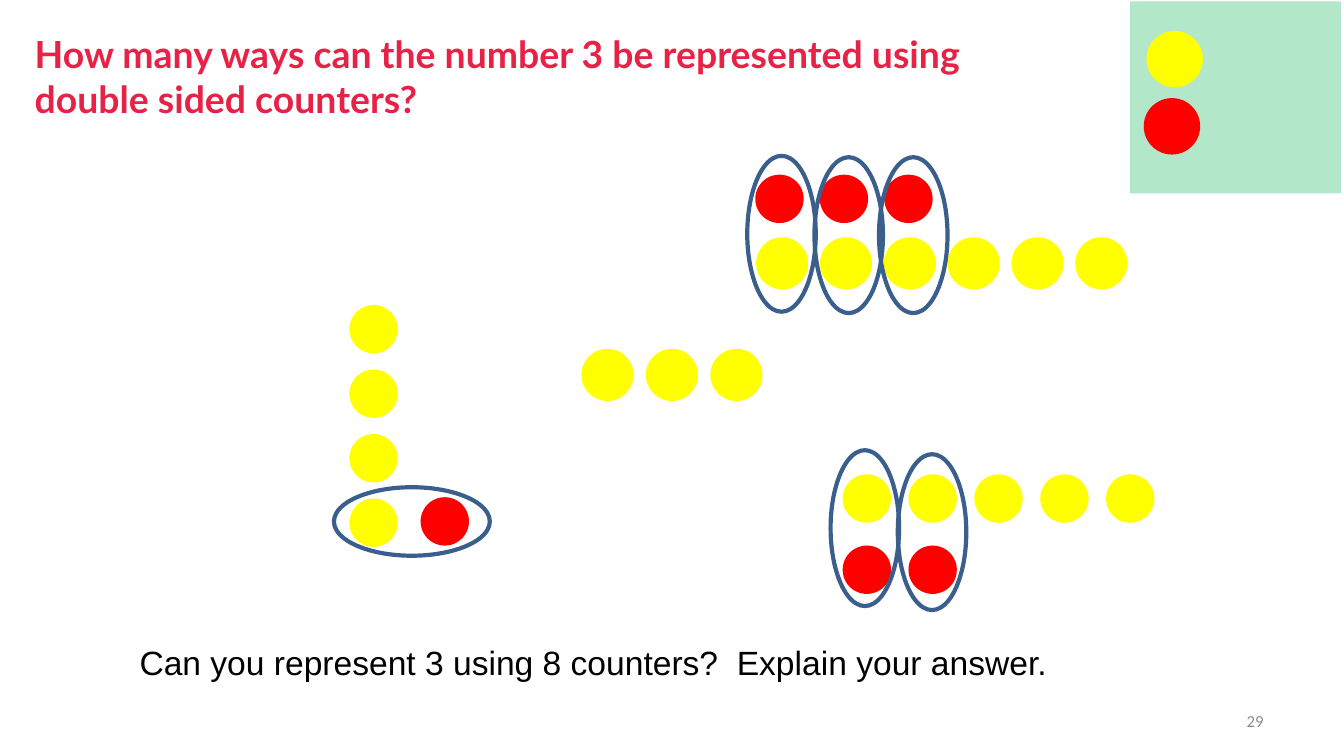
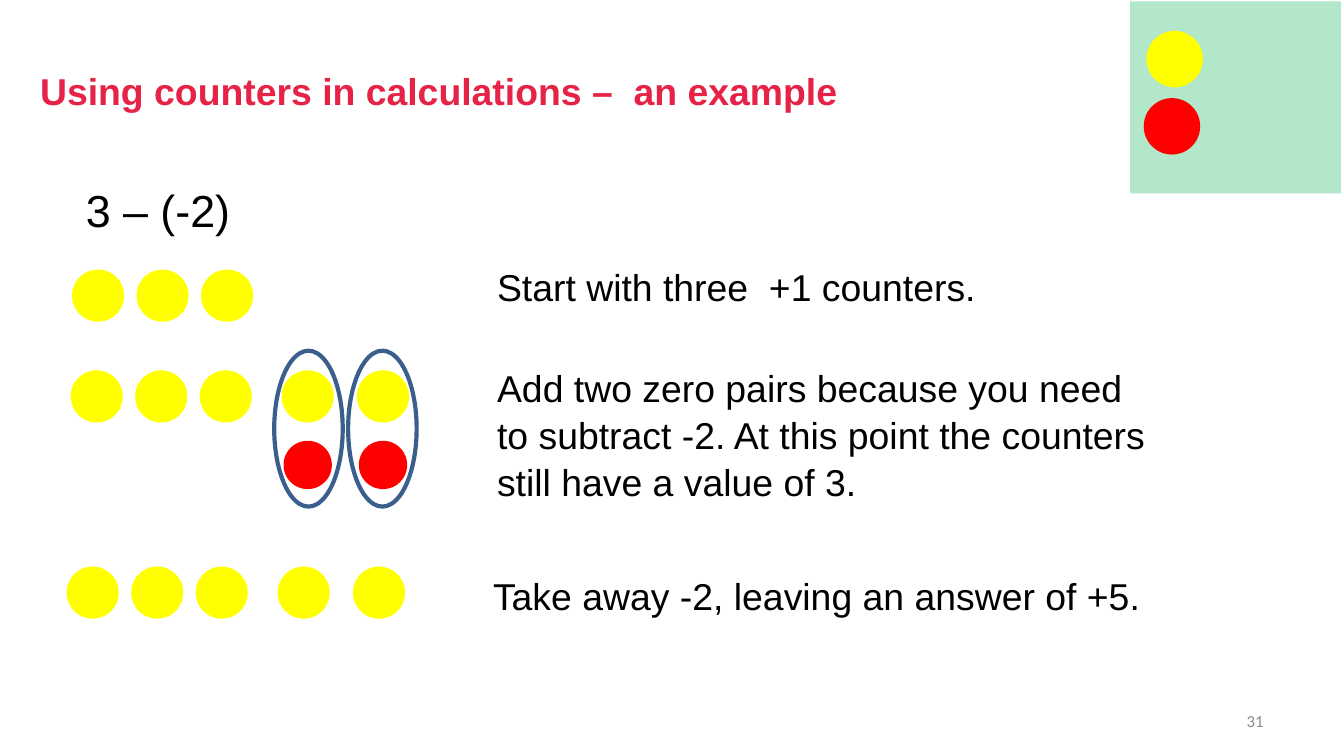
from lxml import etree
from pptx import Presentation
from pptx.dml.color import RGBColor
from pptx.enum import shapes, text
from pptx.oxml import ns
from pptx import util as u

COLOURS = {
    "yellow": "FFFF00",
    "red": "FF0000",
    "green": "00B050",
    "ring": "3A5F8C",
    "title": "E62247",
    "black": "000000",
    "grey": "8C8C8C",
}
COLS = 100              # square cells: 100 columns by 56.25 rows
COUNTER = 3.6
PITCH = 4.8
KEY_COUNTER = 4.2
RING_W, RING_H = 5.1, 11.6


def rgb(name):
    return RGBColor.from_string(COLOURS[name])


def write(p, words, size=20, font="Arial", colour="black", bold=False,
          align=text.PP_ALIGN.LEFT, spacing=1.05):
    p.alignment = align
    p.line_spacing = spacing
    r = p.add_run()
    r.text = words
    r.font.size = u.Pt(size)
    r.font.name = font
    r.font.bold = bold
    r.font.color.rgb = rgb(colour)


class Deck:
    """Holds the style and the current slide; lengths are in grid cells."""

    def __init__(self):
        self.prs = Presentation()
        self.prs.slide_width = u.Inches(10)
        self.prs.slide_height = self.prs.slide_width * 9 // 16
        self.cell = self.prs.slide_width / COLS
        self.slide = None

    def new_slide(self):
        self.slide = self.prs.slides.add_slide(self.prs.slide_layouts[6])

    def box(self, *cells):
        return [u.Emu(round(c * self.cell)) for c in cells]

    def shape(self, kind, x, y, w, h, fill=None, line=None, weight=2.0):
        sp = self.slide.shapes.add_shape(kind, *self.box(x, y, w, h))
        sp.shadow.inherit = False
        if fill:
            sp.fill.solid()
            sp.fill.fore_color.rgb = rgb(fill)
        else:
            sp.fill.background()
        if line:
            sp.line.color.rgb = rgb(line)
            sp.line.width = u.Pt(weight)
        else:
            sp.line.fill.background()
        return sp

    def counter(self, x, y, colour="yellow", size=COUNTER, edge=None):
        self.shape(shapes.MSO_SHAPE.OVAL, x, y, size, size, colour, edge)

    def row(self, x, y, n, colour="yellow", pitch=PITCH, edge=None):
        for i in range(n):
            self.counter(x + i * pitch, y, colour, edge=edge)

    def edged_row(self, x, y, n, pitch=PITCH):
        """Yellow counters made slightly larger by a yellow outline."""
        self.row(x, y, n, pitch=pitch, edge="yellow")

    def ring(self, x, y, rotation=0):
        """Outline around a zero pair."""
        sp = self.shape(shapes.MSO_SHAPE.OVAL, x, y, RING_W, RING_H,
                        line="ring", weight=2.25)
        sp.rotation = rotation

    def text(self, x, y, w, h, words, anchor=text.MSO_ANCHOR.TOP, **style):
        tf = self.slide.shapes.add_textbox(*self.box(x, y, w, h)).text_frame
        tf.word_wrap = True
        tf.vertical_anchor = anchor
        write(tf.paragraphs[0], words, **style)

    def title(self, x, y, w, words, **style):
        self.text(x, y, w, 8.3, words, anchor=text.MSO_ANCHOR.MIDDLE,
                  colour="title", bold=True, **style)

    def page_number(self, number):
        self.text(71.7, 52.1, 23.3, 3, str(number),
                  anchor=text.MSO_ANCHOR.MIDDLE, size=9, font="Calibri",
                  colour="grey", align=text.PP_ALIGN.RIGHT, spacing=1.0)

    def key(self):
        """Translucent corner panel with one counter of each colour."""
        sp = self.shape(shapes.MSO_SHAPE.RECTANGLE, 84.1, 0.1, 15.7, 14.3,
                        "green")
        fill = sp.fill.fore_color._xFill.find(ns.qn("a:srgbClr"))
        etree.SubElement(fill, ns.qn("a:alpha")).set("val", "30000")
        self.counter(85.3, 2.3, "yellow", KEY_COUNTER)
        self.counter(85.1, 7.3, "red", KEY_COUNTER)


def ways_slide(deck):
    deck.new_slide()

    # Four yellow in a column, one red beside the last
    for i in range(4):
        deck.counter(26, 22.7 + i * PITCH)
    deck.counter(31.3, 37, "red")
    deck.ring(28.1, 33, rotation=270)

    # Five yellow, two red
    deck.row(62.7, 35.3, 5, pitch=4.9)
    deck.row(62.7, 40.6, 2, "red", pitch=4.9)
    deck.ring(66.8, 33.8)
    deck.ring(61.8, 33.5)

    # Three yellow
    deck.edged_row(43.4, 26.1, 3)

    # Six yellow, three red
    deck.row(56.2, 13, 3, "red")
    deck.edged_row(56.4, 17.8, 6, pitch=4.75)
    for x, y in [(65.4, 11.7), (60.6, 11.7), (55.6, 11.6)]:
        deck.ring(x, y)

    deck.key()
    deck.title(1.6, 1.5, 77.4, "How many ways can the number 3 be "
               "represented using double sided counters?",
               font="Lato", spacing=1.0)
    deck.text(9.4, 47.1, 69.6, 7.1, "Can you represent 3 using 8 counters?  "
              "Explain your answer.", size=18)
    deck.page_number(29)


def example_slide(deck):
    deck.new_slide()
    deck.title(2, 2.5, 80.3, "Using counters in calculations –  an example")
    deck.page_number(31)
    deck.text(5.4, 12.9, 21.2, 5, "3 – (-2)", size=24)

    deck.edged_row(5.5, 20.2, 3)
    deck.text(36, 19, 40.8, 4.4, "Start with three  +1 counters.")

    deck.edged_row(5.4, 27.7, 3)
    deck.ring(25.9, 26.1)
    deck.ring(20.4, 26.1)
    deck.row(21.1, 32.8, 2, "red", pitch=5.6)
    deck.edged_row(21.1, 27.7, 2, pitch=5.6)
    deck.text(36, 26.5, 50.5, 11.1, "Add two zero pairs because you need to "
              "subtract -2. At this point the counters still have a value "
              "of 3.")

    deck.text(35.7, 42, 50.8, 4.4, "Take away -2, leaving an answer of +5.")
    deck.edged_row(5.1, 42.3, 3)
    deck.edged_row(20.8, 42.3, 2, pitch=5.6)
    deck.key()


def main():
    deck = Deck()
    ways_slide(deck)
    example_slide(deck)
    deck.prs.save("out.pptx")


if __name__ == "__main__":
    main()
